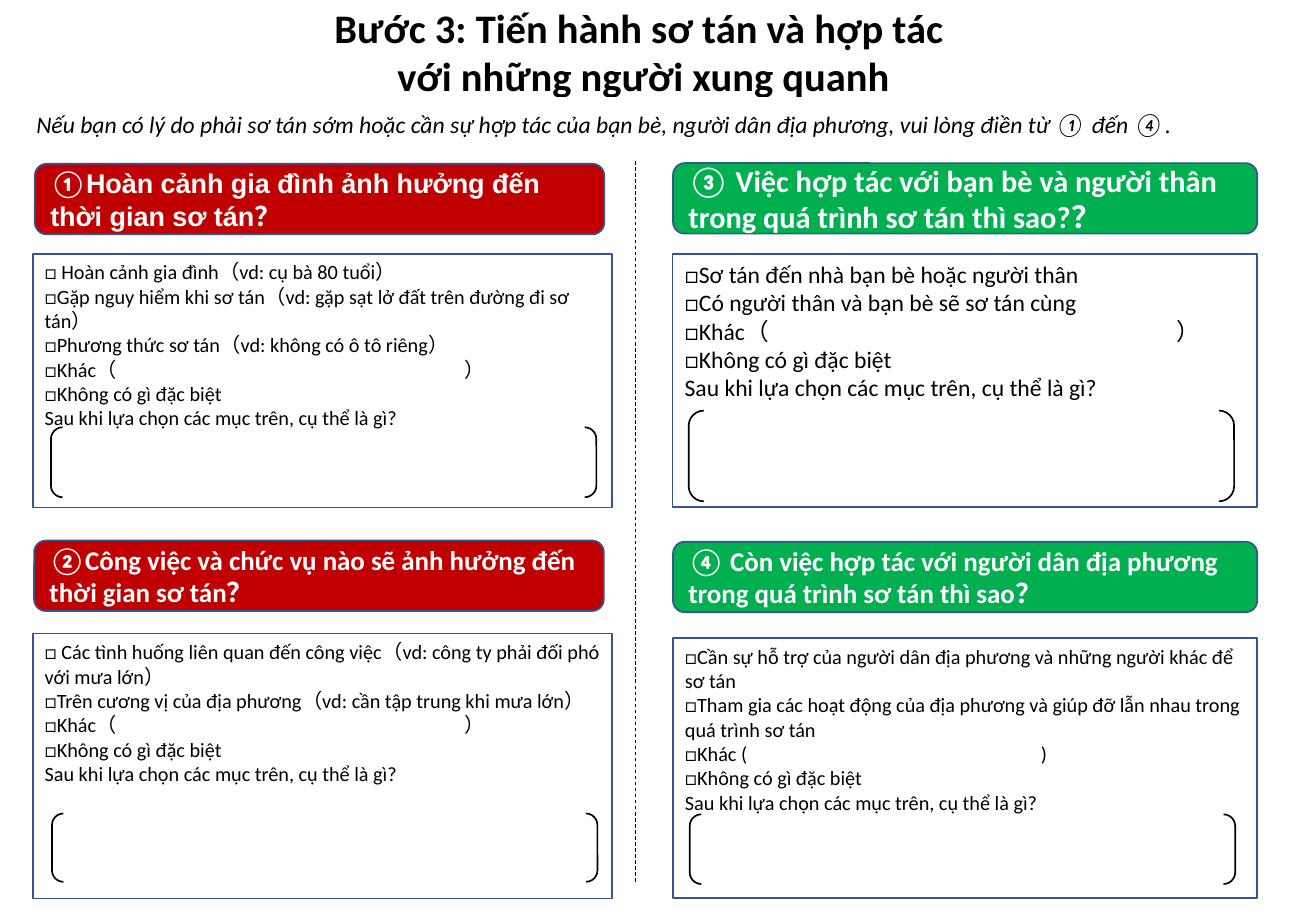
from lxml import etree
from pptx import Presentation
from pptx.dml.color import RGBColor
from pptx.enum.dml import MSO_LINE
from pptx.enum.shapes import MSO_CONNECTOR, MSO_SHAPE
from pptx.enum.text import MSO_ANCHOR, PP_ALIGN
from pptx.oxml.ns import qn
from pptx.util import Pt

COLORS = {
    "red": "C00000",
    "green": "00B050",
    "border": "325491",
    "black": "000000",
    "white": "FFFFFF",
}
FONT = "Calibri"
HEADING_HEIGHT = 41.8
CLOSING_ITEMS = ["□Không có gì đặc biệt", "Sau khi lựa chọn các mục trên, cụ thể là gì?"]

# Boxes are (left, top, width, height) in points; "tab" places the closing parenthesis.
SECTIONS = [
    {
        "color": "red", "heading_box": (20.7, 97.1, 337.5, HEADING_HEIGHT), "heading_size": 16,
        "heading": [("①", FONT), ("Hoàn cảnh gia đình ảnh hưởng đến thời gian sơ tán？", "Arial")],
        "panel_box": (19.4, 150.4, 343.4, 150.5), "panel_size": 12, "tab": 249,
        "items": [
            "□ Hoàn cảnh gia đình（vd: cụ bà 80 tuổi）",
            "□Gặp nguy hiểm khi sơ tán（vd: gặp sạt lở đất trên đường đi sơ tán）",
            "□Phương thức sơ tán（vd: không có ô tô riêng）",
            "□Khác（\t）",
        ],
        "bracket_box": (30.2, 253.3, 323.3, 41.5),
    },
    {
        "color": "red", "heading_box": (20.2, 320.4, 337.7, HEADING_HEIGHT), "heading_size": 16,
        "heading": [("②Công việc và chức vụ nào sẽ ảnh hưởng đến thời gian sơ tán？", FONT)],
        "panel_box": (19.4, 375.6, 343.4, 157), "panel_size": 12, "tab": 249,
        "items": [
            "□ Các tình huống liên quan đến công việc（vd: công ty phải đối phó với mưa lớn）",
            "□Trên cương vị của địa phương（vd: cần tập trung khi mưa lớn）",
            "□Khác（\t）",
        ],
        "bracket_box": (30.8, 482.2, 323.3, 40.5),
    },
    {
        "color": "green", "heading_box": (398.9, 96.7, 346.3, HEADING_HEIGHT), "heading_size": 18,
        "heading": [("③ Việc hợp tác với bạn bè và người thân trong quá trình sơ tán thì sao?？", FONT)],
        "panel_box": (398.7, 150.4, 346.3, 150), "panel_size": 14, "tab": 291.5,
        "items": [
            "□Sơ tán đến nhà bạn bè hoặc người thân",
            "□Có người thân và bạn bè sẽ sơ tán cùng",
            "□Khác（\t）",
        ],
        "bracket_box": (408.2, 243.4, 323.3, 53.8),
    },
    {
        "color": "green", "heading_box": (398.9, 321.1, 346.3, HEADING_HEIGHT), "heading_size": 16,
        "heading": [("④ Còn việc hợp tác với người dân địa phương trong quá trình sơ tán thì sao？", FONT)],
        "panel_box": (398.9, 378.2, 346.3, 154), "panel_size": 12, "tab": 211,
        "items": [
            "□Cần sự hỗ trợ của người dân địa phương và những người khác để sơ tán",
            "□Tham gia các hoạt động của địa phương và giúp đỡ lẫn nhau trong quá trình sơ tán",
            "□Khác (\t)",
        ],
        "bracket_box": (408.8, 482.7, 323.3, 41.3),
    },
]


def color(name):
    return RGBColor.from_string(COLORS[name])


def add_box(slide, preset, box, fill=None, line=None):
    shape = slide.shapes.add_shape(preset, *(Pt(length) for length in box))
    shape.shadow.inherit = False
    if fill:
        shape.fill.solid()
        shape.fill.fore_color.rgb = color(fill)
    else:
        shape.fill.background()
    if line:
        shape.line.color.rgb = color(line)
        shape.line.width = Pt(1)
    else:
        shape.line.fill.background()
    return shape


def write(shape, paragraphs, size, text_color="black", anchor=MSO_ANCHOR.MIDDLE,
          alignment=PP_ALIGN.LEFT, bold=False, italic=False):
    """Fill a shape with paragraphs, each a list of (text, font name) runs."""
    frame = shape.text_frame
    frame.word_wrap = True
    frame.vertical_anchor = anchor
    for index, runs in enumerate(paragraphs):
        paragraph = frame.add_paragraph() if index else frame.paragraphs[0]
        paragraph.alignment = alignment
        for text, font_name in runs:
            run = paragraph.add_run()
            run.text = text
            run.font.name = font_name
            run.font.size = Pt(size)
            run.font.bold = bold
            run.font.italic = italic
            run.font.color.rgb = color(text_color)


def add_tab_stop(paragraph, position):
    properties = paragraph._p.get_or_add_pPr()
    tab_list = etree.SubElement(properties, qn("a:tabLst"))
    etree.SubElement(tab_list, qn("a:tab"), pos=str(Pt(position)), algn="l")


def add_title(slide):
    title = slide.shapes.add_textbox(Pt(0), Pt(5), Pt(757.4), Pt(51))
    lines = ["Bước 3: Tiến hành sơ tán và hợp tác", " với những người xung quanh"]
    write(title, [[(line, FONT)] for line in lines], 24, alignment=PP_ALIGN.CENTER, bold=True)


def add_instruction(slide):
    shape = add_box(slide, MSO_SHAPE.RECTANGLE, (14.4, 57.6, 743, 32.4), fill="white")
    text = ("Nếu bạn có lý do phải sơ tán sớm hoặc cần sự hợp tác của bạn bè, "
            "người dân địa phương, vui lòng điền từ ① đến ④.")
    write(shape, [[(text, FONT)]], 14, italic=True)


def add_divider(slide):
    divider = slide.shapes.add_connector(
        MSO_CONNECTOR.STRAIGHT, Pt(376.6), Pt(522.7), Pt(376.6), Pt(94.3))
    divider.line.color.rgb = color("black")
    divider.line.width = Pt(0.5)
    divider.line.dash_style = MSO_LINE.DASH
    etree.SubElement(divider._element.spPr, qn("a:effectLst"))


def add_section(slide, section):
    heading = add_box(slide, MSO_SHAPE.ROUNDED_RECTANGLE, section["heading_box"],
                      fill=section["color"], line="border")
    write(heading, [section["heading"]], section["heading_size"], "white", bold=True)

    panel = add_box(slide, MSO_SHAPE.RECTANGLE, section["panel_box"], line="border")
    items = section["items"] + CLOSING_ITEMS
    write(panel, [[(item, FONT)] for item in items], section["panel_size"], anchor=MSO_ANCHOR.TOP)
    for paragraph in panel.text_frame.paragraphs:
        if "\t" in paragraph.text:
            add_tab_stop(paragraph, section["tab"])

    add_box(slide, MSO_SHAPE.DOUBLE_BRACKET, section["bracket_box"], line="black")


def main():
    presentation = Presentation()
    presentation.slide_width = Pt(780)
    presentation.slide_height = Pt(540)
    slide = presentation.slides.add_slide(presentation.slide_layouts[6])
    add_title(slide)
    add_instruction(slide)
    add_divider(slide)
    for section in SECTIONS:
        add_section(slide, section)
    presentation.save("out.pptx")


if __name__ == "__main__":
    main()
